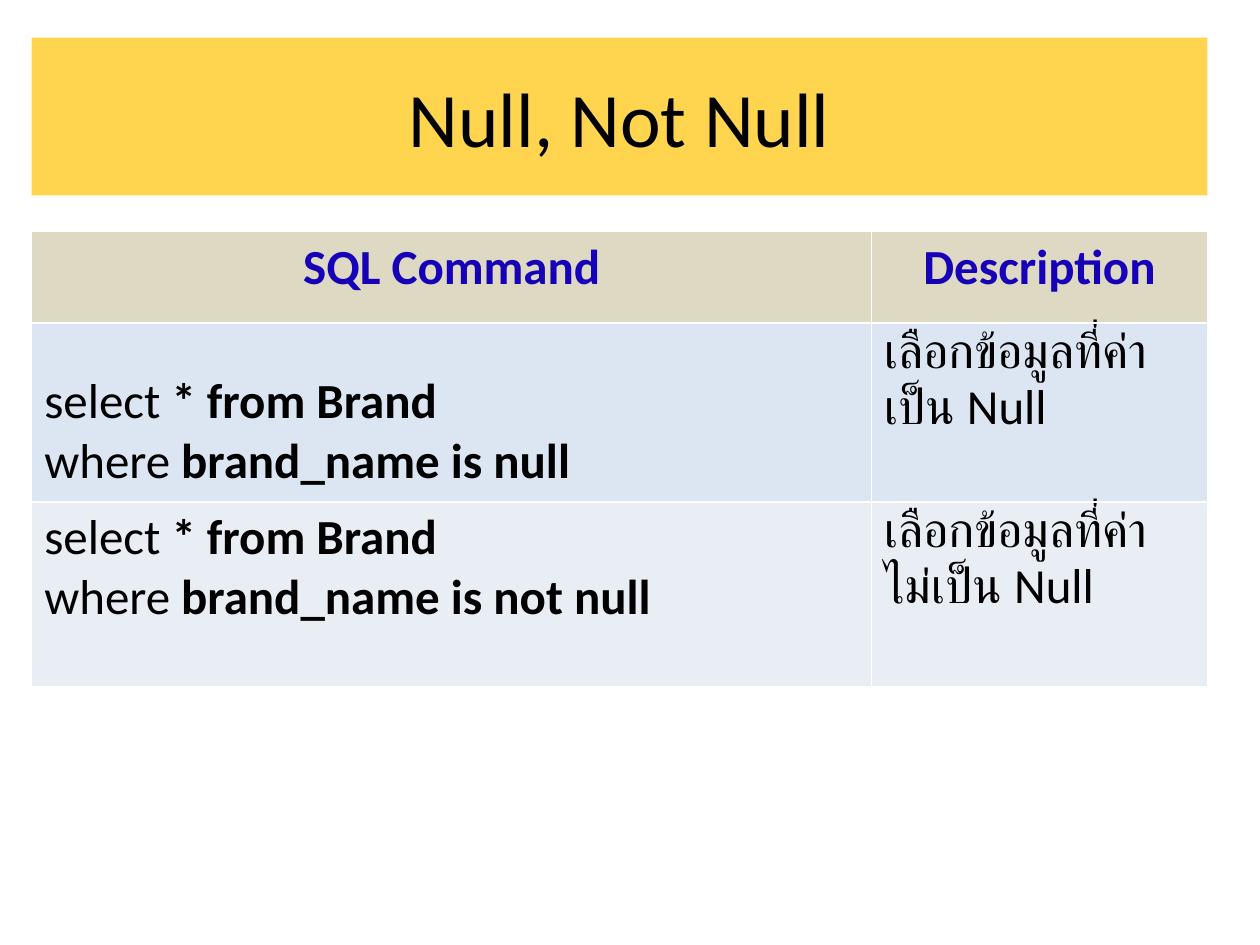
import pptx
import pptx.dml.color
import pptx.enum.text
import pptx.util

Cm = pptx.util.Cm
CENTER = pptx.enum.text.PP_ALIGN.CENTER
COLORS = {
    "banner": "FFD54F",
    "header": "DDD9C3",
    "heading": "1600B8",
    "null_row": "DCE6F2",
    "not_null_row": "E9EDF4",
    "text": "000000",
}
LEFT, WIDTH = 0.64, 23.7


class SlideBuilder:
    font_name = "Calibri"
    title_size = 44
    table_size = 28

    def __init__(self, deck):
        self.slide = deck.slides.add_slide(deck.slide_layouts[5])

    def color(self, name):
        return pptx.dml.color.RGBColor.from_string(COLORS[name])

    def fill(self, target, name):
        target.fill.solid()
        target.fill.fore_color.rgb = self.color(name)

    def style(self, paragraph, size, color="text"):
        font = paragraph.font
        font.name = self.font_name
        font.size = pptx.util.Pt(size)
        font.color.rgb = self.color(color)

    def title(self, wording, top, height):
        banner = self.slide.shapes.title
        banner.left, banner.top = Cm(LEFT), Cm(top)
        banner.width, banner.height = Cm(WIDTH), Cm(height)
        self.fill(banner, "banner")
        frame = banner.text_frame
        frame.text = wording
        frame.vertical_anchor = pptx.enum.text.MSO_ANCHOR.MIDDLE
        frame.paragraphs[0].alignment = CENTER
        self.style(frame.paragraphs[0], self.title_size)

    def table(self, top, column_widths, row_heights):
        table = self.slide.shapes.add_table(
            len(row_heights), len(column_widths),
            Cm(LEFT), Cm(top), Cm(WIDTH), Cm(sum(row_heights)),
        ).table
        for column, width in zip(table.columns, column_widths):
            column.width = Cm(width)
        for row, height in zip(table.rows, row_heights):
            row.height = Cm(height)
        return table

    def heading_cell(self, cell, wording):
        self.fill(cell, "header")
        cell.text = wording
        heading = cell.text_frame.paragraphs[0]
        heading.alignment = CENTER
        self.style(heading, self.table_size, "heading")
        heading.font.bold = True

    def command_cell(self, cell, clauses, fill):
        self.fill(cell, fill)
        frame = cell.text_frame
        for index, (keyword, operand) in enumerate(clauses):
            line = frame.add_paragraph() if index else frame.paragraphs[0]
            self.style(line, self.table_size)
            for wording, bold in ((keyword, False), (operand, True)):
                run = line.add_run()
                run.text = wording
                run.font.bold = bold

    def description_cell(self, cell, wording, fill):
        self.fill(cell, fill)
        cell.text = wording
        description = cell.text_frame.paragraphs[0]
        self.style(description, self.table_size)
        description.font.bold = False


def main():
    deck = pptx.Presentation()
    deck.slide_width, deck.slide_height = Cm(25.4), Cm(19.05)
    builder = SlideBuilder(deck)
    builder.title("Null, Not Null", 0.76, 3.18)

    queries = builder.table(4.66, (16.93, 6.77), (1.85, 3.61, 3.73))
    for column, heading in enumerate(("SQL Command", "Description")):
        builder.heading_cell(queries.cell(0, column), heading)

    conditions = (
        ("brand_name is null", "เลือกข้อมูลที่ค่า เป็น Null", "null_row"),
        ("brand_name is not null", "เลือกข้อมูลที่ค่า ไม่เป็น Null", "not_null_row"),
    )
    for row, (condition, description, fill) in enumerate(conditions, start=1):
        clauses = (("select", " * from Brand"), ("where ", condition))
        builder.command_cell(queries.cell(row, 0), clauses, fill)
        builder.description_cell(queries.cell(row, 1), description, fill)
    queries.cell(1, 0).margin_top = Cm(0.98)

    deck.save("out.pptx")


if __name__ == "__main__":
    main()
